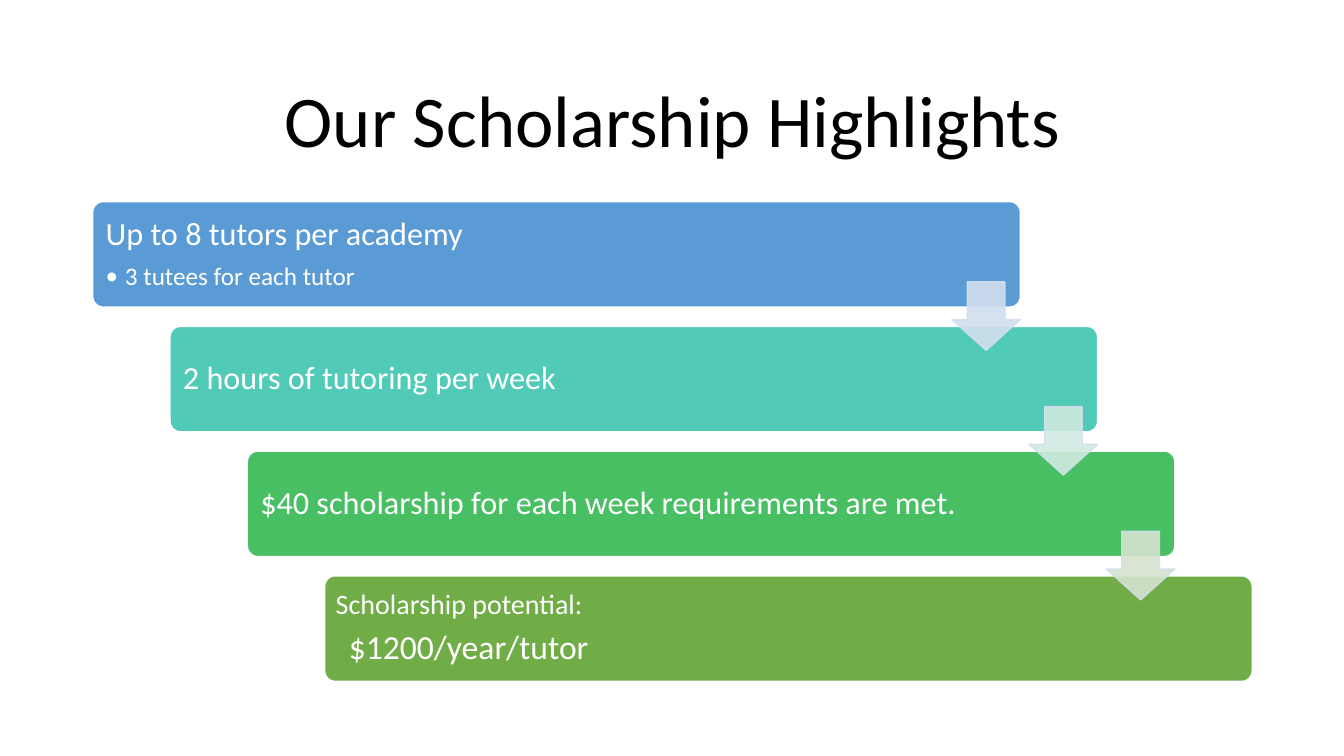
from lxml.etree import SubElement
from pptx import Presentation
from pptx.dml.color import RGBColor
from pptx.enum.shapes import MSO_SHAPE
from pptx.enum.text import MSO_ANCHOR, PP_ALIGN
from pptx.oxml.ns import qn
from pptx.util import Inches, Pt

FONT = "Calibri"
COLOURS = {
    "title": "000000",
    "text": "FFFFFF",
    "edge": "FFFFFF",
    "arrow_edge": "D2DEEF",
}
TITLE_BOX = (0.92, 0.61, 11.5, 1.24)
STAIRCASE_BOX = (0.92, 2, 11.5, 4.76)
STEP_WIDTH, STEP_HEIGHT = 0.8, 0.22  # shares of the staircase
ARROW_SIZE = 0.68
ARROW_OPACITY = 90

# Each line: wording, size, left indent, bullet, space after
STEPS = [
    {"fill": "5B9BD5", "arrow": "D2DEEF", "inset": 0.1,
     "lines": [("Up to 8 tutors per academy", 23, 0, False, 8),
               ("3 tutees for each tutor", 18, 0.19, True, 3)]},
    {"fill": "52CAB8", "arrow": "D0EAE1", "inset": 0.1,
     "lines": [("2 hours of tutoring per week", 23, 0, False, 8)]},
    {"fill": "49BF64", "arrow": "D5E3CF", "inset": 0.1,
     "lines": [("$40 scholarship for each week requirements are met.", 23, 0, False, 8)]},
    {"fill": "70AD47", "arrow": None, "inset": 0.08,
     "lines": [("Scholarship potential:", 20, 0, False, 7),
               ("$1200/year/tutor", 24, 0.13, False, 8)]},
]


def add_span(para, wording, size, colour):
    span = para.add_run()
    span.text = wording
    span.font.name = FONT
    span.font.size = Pt(size)
    span.font.color.rgb = RGBColor.from_string(colour)


def indent(para, left, bullet):
    properties = para._p.get_or_add_pPr()
    properties.set("marL", str(Inches(left)))
    properties.set("indent", str(-Inches(left) if bullet else 0))
    if bullet:
        SubElement(properties, qn("a:buFont"), typeface=FONT)
        SubElement(properties, qn("a:buChar"), char="•")


def set_opacity(colour_format, percent):
    """Make a solid fill, of a shape or of its outline, partly transparent."""
    solid = colour_format._xPr.find(qn("a:solidFill"))
    SubElement(solid[0], qn("a:alpha"), val=str(percent * 1000))


def add_block(page, kind, box, fill, edge, adjustments):
    block = page.shapes.add_shape(kind, *(Inches(length) for length in box))
    block.shadow.inherit = False
    for index, value in enumerate(adjustments):
        block.adjustments[index] = value
    block.fill.solid()
    block.fill.fore_color.rgb = RGBColor.from_string(fill)
    block.line.color.rgb = RGBColor.from_string(edge)
    block.line.width = Pt(1)
    return block


def add_title(page, box, wording):
    frame = page.shapes.add_textbox(*(Inches(length) for length in box)).text_frame
    frame.word_wrap = True
    frame.vertical_anchor = MSO_ANCHOR.MIDDLE
    para = frame.paragraphs[0]
    para.alignment = PP_ALIGN.CENTER
    para.line_spacing = 0.9
    add_span(para, wording, 52, COLOURS["title"])


def add_step(page, box, step):
    block = add_block(page, MSO_SHAPE.ROUNDED_RECTANGLE, box,
                      step["fill"], COLOURS["edge"], [0.1])
    frame = block.text_frame
    frame.word_wrap = True
    frame.vertical_anchor = MSO_ANCHOR.MIDDLE
    frame.margin_left = frame.margin_right = Inches(step["inset"])
    frame.margin_top = frame.margin_bottom = Inches(step["inset"])
    for index, (wording, size, left, bullet, after) in enumerate(step["lines"]):
        para = frame.add_paragraph() if index else frame.paragraphs[0]
        para.alignment = PP_ALIGN.LEFT
        para.line_spacing = 0.9
        para.space_after = Pt(after)
        indent(para, left, bullet)
        add_span(para, wording, size, COLOURS["text"])


def add_arrow(page, box, fill):
    arrow = add_block(page, MSO_SHAPE.DOWN_ARROW, box,
                      fill, COLOURS["arrow_edge"], [0.55, 0.45])
    for paint in (arrow.fill, arrow.line.fill):
        set_opacity(paint, ARROW_OPACITY)


def add_staircase(page, box, steps):
    """Spread the steps evenly down and across the box, linked by arrows."""
    left, top, width, height = box
    step_width, step_height = width * STEP_WIDTH, height * STEP_HEIGHT
    shift = (width - step_width) / (len(steps) - 1)
    drop = (height - step_height) / (len(steps) - 1)
    corners = [(left + shift * n, top + drop * n) for n in range(len(steps))]
    for (x, y), step in zip(corners, steps):
        add_step(page, (x, y, step_width, step_height), step)
    for (x, y), step in zip(corners, steps):
        if step["arrow"]:
            add_arrow(page, (x + step_width - ARROW_SIZE, y + step_height * 0.76,
                             ARROW_SIZE, ARROW_SIZE), step["arrow"])


def main():
    deck = Presentation()
    deck.slide_width, deck.slide_height = Inches(13.33), Inches(7.5)
    page = deck.slides.add_slide(deck.slide_layouts[6])
    add_title(page, TITLE_BOX, "Our Scholarship Highlights")
    add_staircase(page, STAIRCASE_BOX, STEPS)
    deck.save("out.pptx")


if __name__ == "__main__":
    main()
